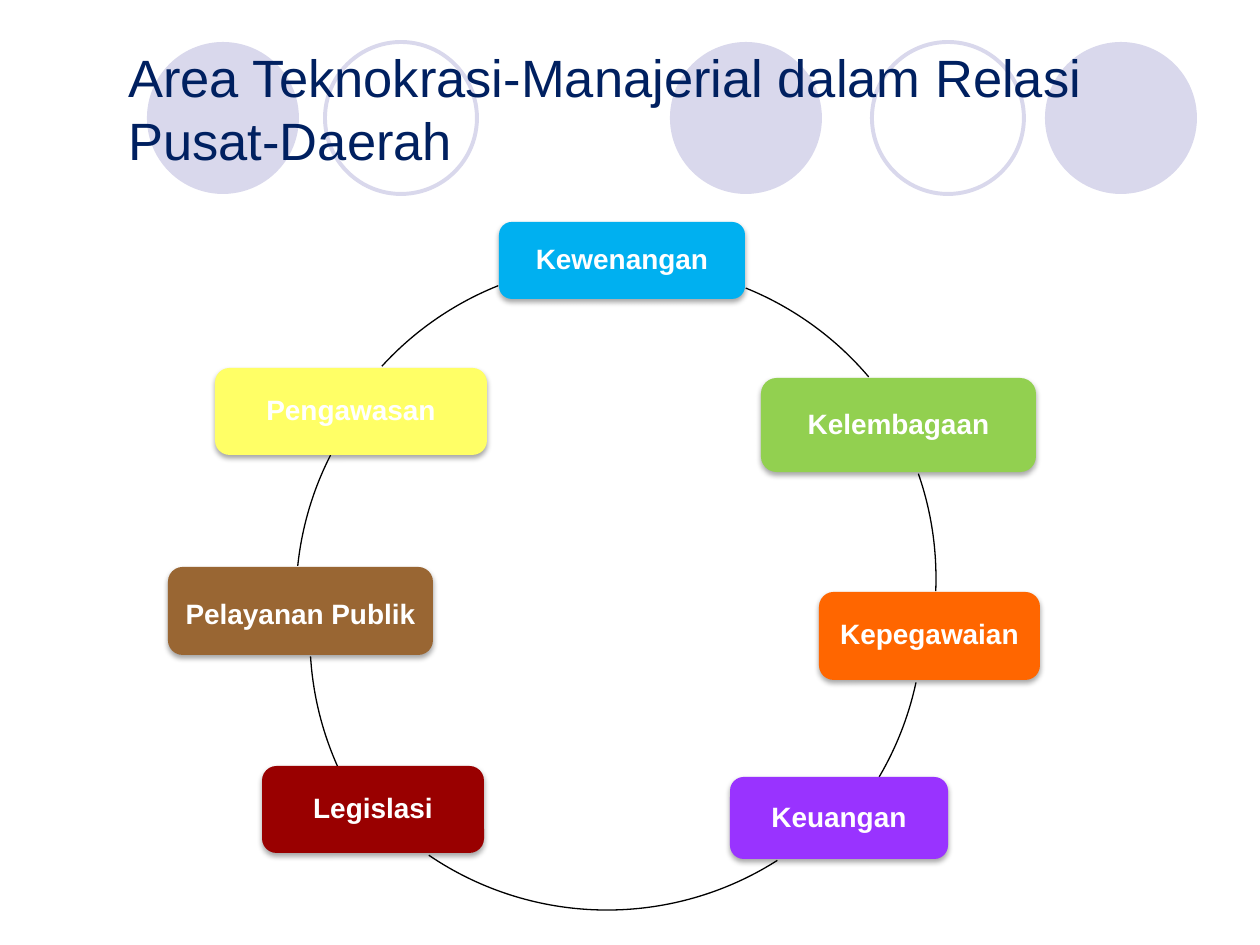
from lxml import etree
from pptx import Presentation
from pptx.dml.color import RGBColor
from pptx.enum.shapes import MSO_SHAPE
from pptx.enum.text import MSO_ANCHOR, PP_ALIGN
from pptx.oxml import parse_xml
from pptx.util import Pt

OVAL, ROUND, ARC = MSO_SHAPE.OVAL, MSO_SHAPE.ROUNDED_RECTANGLE, MSO_SHAPE.ARC
MIDDLE, CENTER = MSO_ANCHOR.MIDDLE, PP_ALIGN.CENTER
PX = 914400 / 126
FONT = "Arial"

COLORS = {
    "navy": "002060", "lilac": "D9D8EC", "white": "FFFFFF", "black": "000000",
    "blue": "00B0F0", "green": "92D050", "orange": "FF6600", "violet": "9933FF",
    "red": "990000", "brown": "996633", "yellow": "FFFF66",
}

TITLE = "Area Teknokrasi-Manajerial dalam Relasi Pusat-Daerah"

# Header circles: left edge, filled or ring
DOT = 152
DOTS = [(670, True), (1045, True), (147, True), (872, False), (325, False)]

# Cycle steps: label, colour, box, line spacing
STEPS = [
    ("Kewenangan", "blue", (499, 222, 246, 77), 0.9),
    ("Kelembagaan", "green", (761, 378, 275, 94), 0.9),
    ("Kepegawaian", "orange", (819, 592, 221, 88), 0.9),
    ("Keuangan", "violet", (730, 777, 218, 82), 0.9),
    ("Legislasi", "red", (262, 766, 222, 87), 0.9),
    ("Pelayanan Publik", "brown", (168, 567, 265, 88), 1.14),
    ("Pengawasan", "yellow", (215, 368, 272, 87), 0.9),
]

# Arc after each step: left and top of its circle, clockwise degrees
RING = 634
ARCS = [
    (310, 265, 292, 319.7), (302, 261, 340.8, 2.4), (289, 299, 12.1, 30.5),
    (290, 276, 57.5, 124.2), (310, 320, 156, 176.5), (296, 282, 186, 207),
    (299, 263, 222.4, 248.2),
]

NS = "http://schemas.openxmlformats.org/drawingml/2006/main"
SHADOW = f"""<a:effectLst xmlns:a="{NS}">
  <a:outerShdw blurRad="40000" dist="23000" dir="5400000" rotWithShape="0">
    <a:srgbClr val="{COLORS['black']}"><a:alpha val="35000"/></a:srgbClr>
  </a:outerShdw>
</a:effectLst>"""


def rgb(name):
    return RGBColor.from_string(COLORS[name])


def emu(*vals):
    return [round(v * PX) for v in vals]


def add(slide, kind, box, fill=None, line=None, width=0):
    shape = slide.shapes.add_shape(kind, *emu(*box))
    shape.shadow.inherit = False
    if fill:
        shape.fill.solid()
        shape.fill.fore_color.rgb = rgb(fill)
    else:
        shape.fill.background()
    if line:
        shape.line.color.rgb = rgb(line)
        shape.line.width = Pt(width)
    else:
        shape.line.fill.background()
    return shape


def write(shape, text, size, color, bold=False):
    frame = shape.text_frame
    frame.word_wrap = True
    frame.vertical_anchor = MIDDLE
    para = frame.paragraphs[0]
    para.text = text
    font = para.font
    font.name, font.size, font.bold = FONT, Pt(size), bold
    font.color.rgb = rgb(color)
    return para


def cast(shape):
    props = shape._element.spPr
    old = props.find(etree.QName(NS, "effectLst").text)
    props.replace(old, parse_xml(SHADOW))


def main():
    prs = Presentation()
    prs.slide_width, prs.slide_height = emu(1260, 945)
    slide = prs.slides.add_slide(prs.slide_layouts[6])

    # Header circles
    for left, full in DOTS:
        look = {"fill": "lilac"} if full else {"line": "lilac", "width": 2.25}
        add(slide, OVAL, (left, 42, DOT, DOT), **look)

    # Title
    title = slide.shapes.add_textbox(*emu(116, 38, 1113, 141))
    write(title, TITLE, 30, "navy")

    # Cycle of steps, each followed by its arc
    for (label, color, box, gap), (left, top, start, end) in zip(STEPS, ARCS):
        step = add(slide, ROUND, box, color)
        cast(step)
        para = write(step, label, 16, "white", True)
        para.alignment = CENTER
        para.line_spacing = gap

        arc = add(slide, ARC, (left, top, RING, RING), line="black", width=0.75)
        # Angles are stored in 60000ths of a degree, adjustments in 100000ths
        arc.adjustments[0] = start * 0.6
        arc.adjustments[1] = end * 0.6

    prs.save("out.pptx")


if __name__ == "__main__":
    main()
